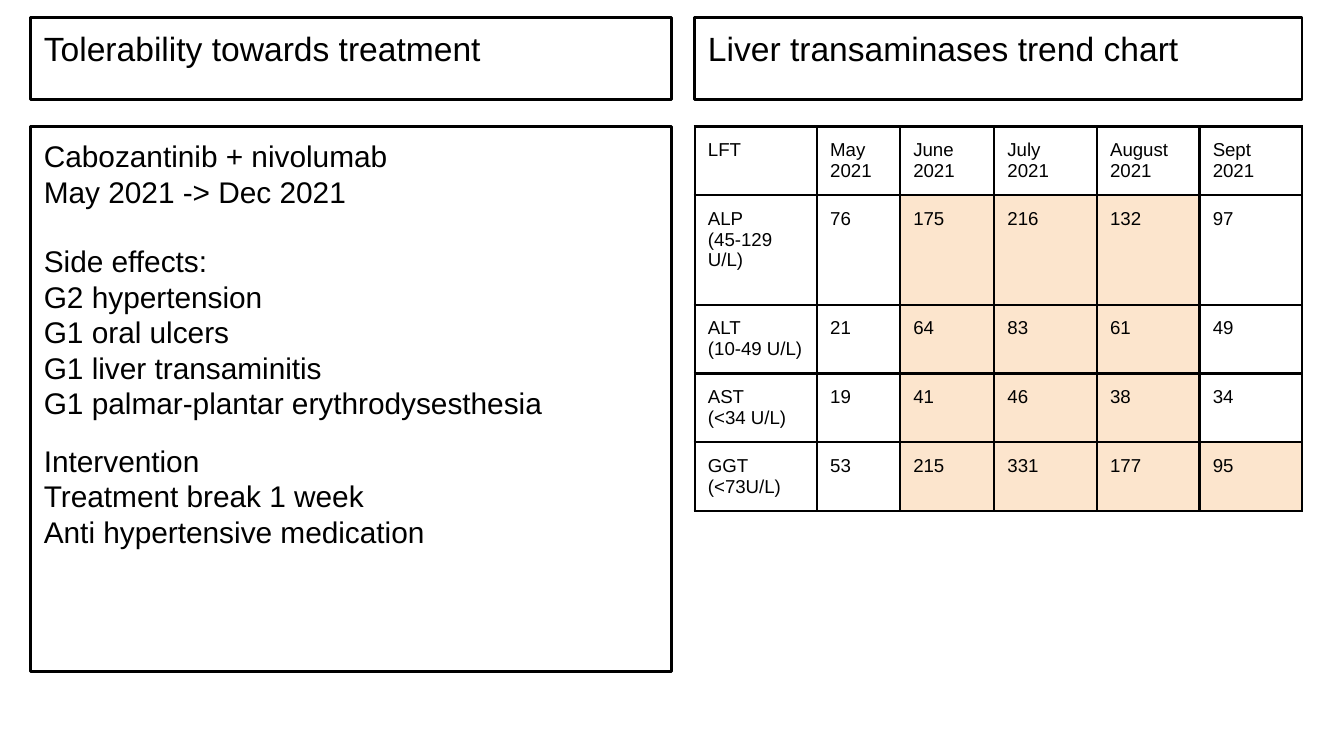
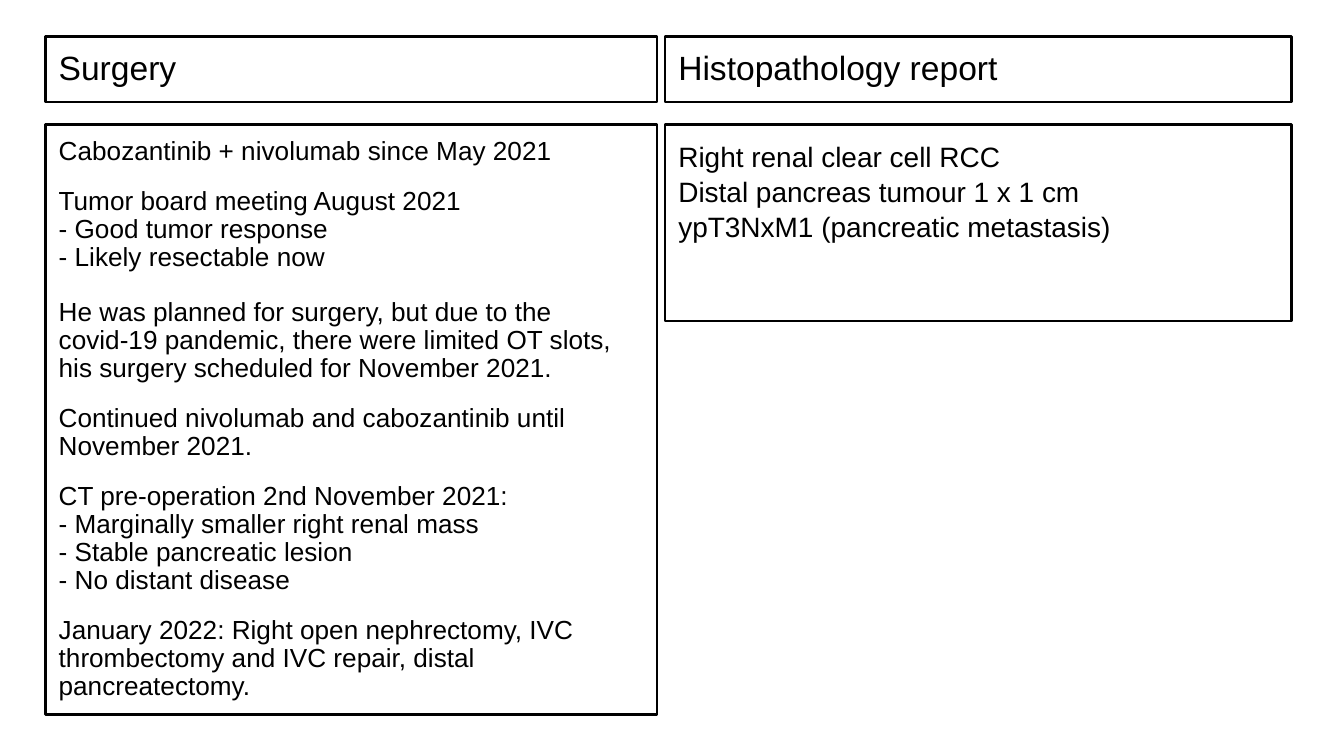
import lxml.etree
import pptx
import pptx.dml.color
import pptx.enum.shapes
import pptx.enum.text
import pptx.oxml.ns
import pptx.util

Cm = pptx.util.Cm
Pt = pptx.util.Pt
COLORS = {"ink": "000000", "paper": "FFFFFF", "raised": "FCE5CD"}
RGB = {name: pptx.dml.color.RGBColor.from_string(value) for name, value in COLORS.items()}
FONT = "Arial"
INSET = Cm(0.25)
LINE_WIDTH = Pt(1.5)
TITLE_SIZE = 18


def style_text(holder, paragraphs, size):
    """Set equal insets on a text frame or cell, and the font of its paragraphs."""
    holder.margin_left = holder.margin_right = INSET
    holder.margin_top = holder.margin_bottom = INSET
    for paragraph in paragraphs:
        paragraph.alignment = pptx.enum.text.PP_ALIGN.LEFT
        paragraph.font.name = FONT
        paragraph.font.size = Pt(size)
        paragraph.font.color.rgb = RGB["ink"]


def add_box(slide, left, top, width, height, entries, size, spacing, after=0):
    """Add an outlined box; entries are (space before in points, text) pairs."""
    shape = slide.shapes.add_shape(pptx.enum.shapes.MSO_SHAPE.RECTANGLE,
                                   Cm(left), Cm(top), Cm(width), Cm(height))
    shape.shadow.inherit = False
    shape.fill.background()
    shape.line.color.rgb = RGB["ink"]
    shape.line.width = LINE_WIDTH
    frame = shape.text_frame
    frame.word_wrap = True
    frame.vertical_anchor = pptx.enum.text.MSO_ANCHOR.TOP
    for index, (before, text) in enumerate(entries):
        paragraph = frame.add_paragraph() if index else frame.paragraphs[0]
        paragraph.text = text
        paragraph.line_spacing = spacing
        paragraph.space_before = Pt(before)
        paragraph.space_after = Pt(after)
    style_text(frame, frame.paragraphs, size)


presentation = pptx.Presentation()
presentation.slide_width = Cm(25.4)
presentation.slide_height = Cm(14.29)

treatment = [
    (0, "Cabozantinib + nivolumab\vMay 2021 -> Dec 2021"),
    (18.2, "Side effects:\vG2 hypertension\vG1 oral ulcers"),
    (0, "G1 liver transaminitis"),
    (0, "G1 palmar-plantar erythrodysesthesia"),
    (12, "Intervention\vTreatment break 1 week\vAnti hypertensive medication"),
]
surgery = [
    (0, "Cabozantinib + nivolumab since May 2021"),
    (12, "Tumor board meeting August 2021\v- Good tumor response\v- Likely resectable now"),
    (14.4, "He was planned for surgery, but due to the covid-19 pandemic, there were "
           "limited OT slots, his surgery scheduled for November 2021."),
    (12, "Continued nivolumab and cabozantinib until November 2021."),
    (12, "CT pre-operation 2nd November 2021:\v- Marginally smaller right renal mass\v"
         "- Stable pancreatic lesion\v- No distant disease"),
    (12, "January 2022: Right open nephrectomy, IVC thrombectomy and IVC repair, "
         "distal pancreatectomy."),
]
histopathology = [
    (0, "Right renal clear cell RCC"),
    (0, "Distal pancreas tumour 1 x 1 cm"),
    (0, "ypT3NxM1 (pancreatic metastasis)"),
]

# Each slide: title top and height, then (left, width, title) for its two columns
layouts = [
    (0.33, 1.55, [(0.58, 12.12, "Tolerability towards treatment"),
                  (13.13, 11.48, "Liver transaminases trend chart")]),
    (0.69, 1.24, [(0.86, 11.56, "Surgery"),
                  (12.57, 11.84, "Histopathology report")]),
]
slides = []
for title_top, title_height, columns in layouts:
    slide = presentation.slides.add_slide(presentation.slide_layouts[6])
    slides.append(slide)
    for left, width, title in columns:
        add_box(slide, left, title_top, width, title_height, [(0, title)],
                TITLE_SIZE, 0.95, after=12)
tolerability_slide, surgery_slide = slides

add_box(tolerability_slide, 0.58, 2.39, 12.12, 10.31, treatment, 16, 0.99)
add_box(surgery_slide, 0.86, 2.36, 11.56, 11.15, surgery, 14, 0.89)
add_box(surgery_slide, 12.57, 2.36, 11.84, 3.71, histopathology, 15, 1.04)

# Liver function table; values above the reference limit are shaded
liver_rows = [
    ["LFT", "May 2021", "June 2021", "July 2021", "August 2021", "Sept 2021"],
    ["ALP\v(45-129 U/L)", "76", "175", "216", "132", "97"],
    ["ALT\n(10-49 U/L)", "21", "64", "83", "61", "49"],
    ["AST\n(<34 U/L)", "19", "41", "46", "38", "34"],
    ["GGT (<73U/L)", "53", "215", "331", "177", "95"],
]
raised_columns = [(), (2, 3, 4), (2, 3, 4), (2, 3, 4), (2, 3, 4, 5)]
column_widths = [2.31, 1.57, 1.78, 1.94, 1.94, 1.94]
row_heights = [1.3, 2.07, 1.3, 1.3, 1.3]
table = tolerability_slide.shapes.add_table(
    len(row_heights), len(column_widths), Cm(13.13), Cm(2.39),
    Cm(sum(column_widths)), Cm(sum(row_heights))).table
table.first_row = False
table.horz_banding = False
for column, width in zip(table.columns, column_widths):
    column.width = Cm(width)
for row, height in zip(table.rows, row_heights):
    row.height = Cm(height)

qn = pptx.oxml.ns.qn
for row_index, texts in enumerate(liver_rows):
    for column_index, text in enumerate(texts):
        cell = table.cell(row_index, column_index)
        cell.text = text
        style_text(cell, cell.text_frame.paragraphs, 10)
        properties = cell._tc.get_or_add_tcPr()
        for side in ("a:lnL", "a:lnR", "a:lnT", "a:lnB"):
            border = lxml.etree.SubElement(properties, qn(side), w=str(LINE_WIDTH))
            fill = lxml.etree.SubElement(border, qn("a:solidFill"))
            lxml.etree.SubElement(fill, qn("a:srgbClr"), val=COLORS["ink"])
        raised = column_index in raised_columns[row_index]
        cell.fill.solid()
        cell.fill.fore_color.rgb = RGB["raised" if raised else "paper"]

presentation.save("out.pptx")
